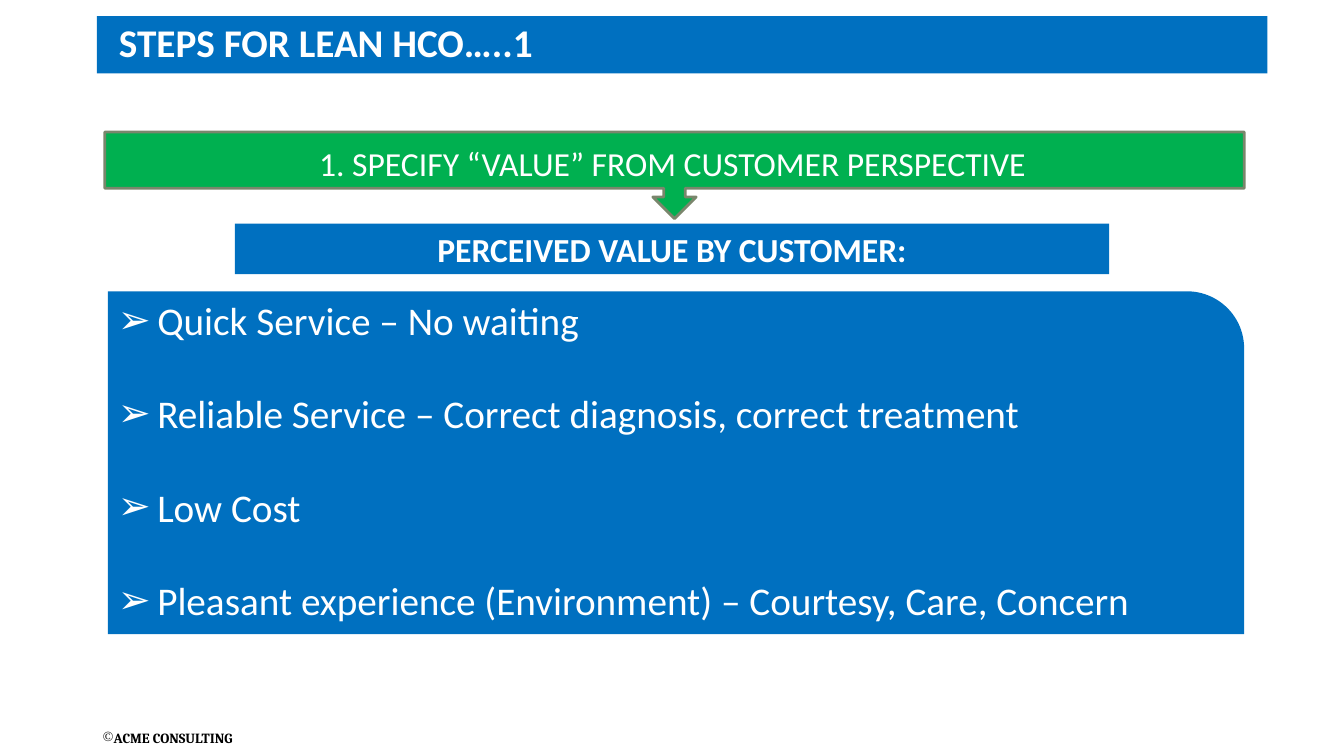
from dataclasses import dataclass

from lxml import etree
from pptx import Presentation
from pptx import util as u
from pptx.dml.color import RGBColor
from pptx.enum import shapes, text
from pptx.oxml.ns import qn

PX = 9144  # EMU per px, 100 px to the inch

WHITE = RGBColor(0xFF, 0xFF, 0xFF)
BLACK = RGBColor(0, 0, 0)
BLUE = RGBColor(0x00, 0x70, 0xC0)
GREEN = RGBColor(0x00, 0xB0, 0x50)
OLIVE = RGBColor(0x7A, 0x86, 0x6C)

LEFT, CENTER = text.PP_ALIGN.LEFT, text.PP_ALIGN.CENTER
TOP, MIDDLE = text.MSO_ANCHOR.TOP, text.MSO_ANCHOR.MIDDLE
RECTANGLE = shapes.MSO_SHAPE.RECTANGLE


@dataclass(frozen=True)
class Box:
    left: int
    top: int
    width: int
    height: int

    def emu(self) -> tuple[int, int, int, int]:
        return self.left * PX, self.top * PX, self.width * PX, self.height * PX


@dataclass(frozen=True)
class Panel:
    box: Box
    preset: shapes.MSO_SHAPE
    fill: RGBColor
    outline: RGBColor | None = None


@dataclass(frozen=True)
class Style:
    size: int
    bold: bool = False
    color: RGBColor = WHITE
    font: str = "Calibri"
    alignment: text.PP_ALIGN = LEFT
    anchor: text.MSO_ANCHOR = TOP
    wrap: bool = True
    bullet: str = ""
    indent: int = 0
    gap: int = 0


HEADER = Panel(Box(96, 16, 1161, 57), RECTANGLE, BLUE)
STEP = Panel(Box(104, 131, 1130, 86), shapes.MSO_SHAPE.DOWN_ARROW_CALLOUT, GREEN, OLIVE)
SUBHEADING = Panel(Box(233, 222, 867, 50), RECTANGLE, BLUE)
VALUES = Panel(Box(107, 289, 1127, 340), shapes.MSO_SHAPE.ROUND_1_RECTANGLE, BLUE)

TITLE_BOX = Box(108, 13, 435, 57)
STEP_TEXT_BOX = Box(292, 137, 750, 50)
FOOTER_BOX = Box(92, 719, 205, 27)

TITLE_STYLE = Style(28, bold=True, anchor=MIDDLE, wrap=False)
STEP_STYLE = Style(24, alignment=CENTER)
SUBHEADING_STYLE = Style(24, bold=True, alignment=CENTER, anchor=MIDDLE)
VALUES_STYLE = Style(28, bullet="➢", indent=39, gap=33)
FOOTER_STYLE = Style(10, bold=True, color=BLACK, font="Cambria", bullet="©")

CUSTOMER_VALUES = [
    "Quick Service – No waiting",
    "Reliable Service – Correct diagnosis, correct treatment",
    "Low Cost",
    "Pleasant experience (Environment) – Courtesy, Care, Concern",
]


def add_panel(slide, panel: Panel):
    shape = slide.shapes.add_shape(panel.preset, *panel.box.emu())
    shape.shadow.inherit = False
    shape.fill.solid()
    shape.fill.fore_color.rgb = panel.fill
    if panel.outline is None:
        shape.line.fill.background()
    else:
        shape.line.color.rgb = panel.outline
        shape.line.width = u.Pt(2)
    return shape


def set_bullet(paragraph, character: str, indent: int) -> None:
    properties = paragraph._p.get_or_add_pPr()
    properties.set("marL", str(indent * PX))
    properties.set("indent", str(-indent * PX))
    etree.SubElement(properties, qn("a:buChar")).set("char", character)


def write(shape, lines: list[str], style: Style) -> None:
    frame = shape.text_frame
    frame.auto_size = text.MSO_AUTO_SIZE.NONE
    frame.word_wrap = style.wrap
    frame.vertical_anchor = style.anchor
    frame.text = "\n".join(lines)
    for index, paragraph in enumerate(frame.paragraphs):
        if style.bullet:
            set_bullet(paragraph, style.bullet, style.indent)
        paragraph.alignment = style.alignment
        paragraph.space_before = u.Pt(style.gap if index else 0)
        paragraph.font.name = style.font
        paragraph.font.size = u.Pt(style.size)
        paragraph.font.bold = style.bold
        paragraph.font.color.rgb = style.color


def add_label(slide, box: Box, line: str, style: Style) -> None:
    write(slide.shapes.add_textbox(*box.emu()), [line], style)


def fill_placeholder(slide, placeholder, box: Box, lines: list[str], style: Style) -> None:
    """Places and fills a placeholder, in front of the panels drawn so far."""
    placeholder.left, placeholder.top, placeholder.width, placeholder.height = box.emu()
    write(placeholder, lines, style)
    slide.shapes.element.append(placeholder.element)


def main() -> None:
    presentation = Presentation()
    presentation.slide_width = 1333 * PX
    presentation.slide_height = 750 * PX
    slide = presentation.slides.add_slide(presentation.slide_layouts[1])
    title, body = slide.placeholders

    add_label(slide, FOOTER_BOX, "ACME CONSULTING", FOOTER_STYLE)
    add_panel(slide, HEADER)
    fill_placeholder(slide, title, TITLE_BOX, ["STEPS FOR LEAN HCO…..1"], TITLE_STYLE)

    add_panel(slide, STEP)
    add_label(slide, STEP_TEXT_BOX, "1. SPECIFY “VALUE” FROM CUSTOMER PERSPECTIVE", STEP_STYLE)
    write(add_panel(slide, SUBHEADING), ["PERCEIVED VALUE BY CUSTOMER:"], SUBHEADING_STYLE)

    add_panel(slide, VALUES)
    fill_placeholder(slide, body, VALUES.box, CUSTOMER_VALUES, VALUES_STYLE)

    presentation.save("out.pptx")


if __name__ == "__main__":
    main()
